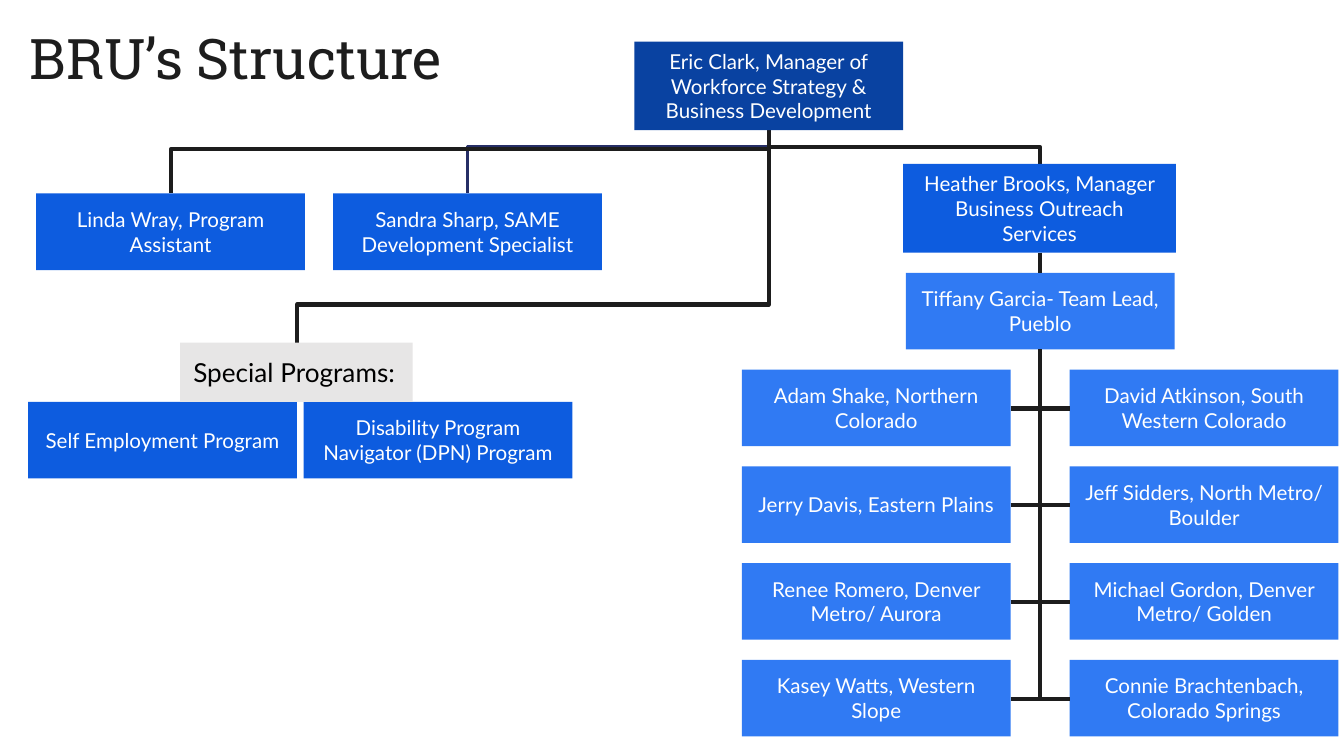
from lxml.etree import SubElement
from pptx import Presentation
from pptx.dml.color import RGBColor
from pptx.enum.shapes import MSO_CONNECTOR, MSO_SHAPE
from pptx.enum.text import MSO_ANCHOR, PP_ALIGN
from pptx.oxml.ns import qn
from pptx.util import Inches, Pt

COLORS = {
    "ink": "1D1D1D", "navy": "0942A1", "blue": "0D5CDF", "sky": "307AF3",
    "gray": "E7E6E6", "thin": "262E66", "white": "FFFFFF", "black": "000000",
}
MARGINS = ("margin_left", "margin_top", "margin_right", "margin_bottom")

prs = Presentation()
prs.slide_width, prs.slide_height = Inches(10), Inches(10 * 9 / 16)
s = prs.slides.add_slide(prs.slide_layouts[6])


def add_box(text, x, y, w=2, h=0.57, fill="blue", color="white", size=11,
            align=PP_ALIGN.CENTER, anchor=MSO_ANCHOR.MIDDLE):
    sp = s.shapes.add_shape(MSO_SHAPE.RECTANGLE, *map(Inches, (x, y, w, h)))
    sp.shadow.inherit = False
    sp.fill.solid()
    sp.fill.fore_color.rgb = RGBColor.from_string(COLORS[fill])
    sp.line.fill.background()
    tf = sp.text_frame
    tf.word_wrap, tf.vertical_anchor = True, anchor
    for name in MARGINS:
        setattr(tf, name, Inches(0.1))
    p = tf.paragraphs[0]
    p.alignment = align
    r = p.add_run()
    r.text = text
    font = {"name": "Lato", "size": Pt(size)}
    for name, value in font.items():
        setattr(r.font, name, value)
    r.font.color.rgb = RGBColor.from_string(COLORS[color])


def add_line(x1, y1, x2, y2, bend=None, color="ink", width=2.25):
    """Draw a straight line, or a down-across-down elbow bending at a share of its height."""
    kind = MSO_CONNECTOR.STRAIGHT
    if bend is not None:
        # The elbow is laid out sideways about its centre, then turned by 90 degrees.
        kind = MSO_CONNECTOR.ELBOW
        cx, cy, dx, dy = (x1 + x2) / 2, (y1 + y2) / 2, x2 - x1, y2 - y1
        x1, y1, x2, y2 = cx - dy / 2, cy + dx / 2, cx + dy / 2, cy - dx / 2
    c = s.shapes.add_connector(kind, *map(Inches, (x1, y1, x2, y2)))
    c.line.color.rgb = RGBColor.from_string(COLORS[color])
    c.line.width = Pt(width)
    spPr = c._element.spPr
    SubElement(spPr, qn("a:effectLst"))
    if bend is not None:
        spPr.find(qn("a:xfrm")).set("rot", str(90 * 60000))
        avLst = spPr.find(qn("a:prstGeom")).get_or_add_avLst()
        SubElement(avLst, qn("a:gd"), name="adj1", fmla=f"val {round(bend * 100000)}")


# Title
tf = s.shapes.add_textbox(*map(Inches, (0.15, 0.02, 10, 0.88))).text_frame
tf.word_wrap, tf.vertical_anchor = True, MSO_ANCHOR.MIDDLE
for name, margin in zip(MARGINS, (0.07, 0.04, 0.07, 0.04)):
    setattr(tf, name, Inches(margin))
p = tf.paragraphs[0]
p.line_spacing = 0.9
r = p.add_run()
r.text = "BRU’s Structure"
for name, value in {"name": "Roboto Slab", "size": Pt(30)}.items():
    setattr(r.font, name, value)
r.font.color.rgb = RGBColor.from_string(COLORS["ink"])

# Branches from the manager
top_x, top_y = 5.72, 0.97
add_line(top_x, top_y, 3.48, 1.44, bend=0.26, color="thin", width=1.5)
for x, y, bend in [(1.27, 1.44, 0.3), (2.21, 2.55, 0.82), (7.74, 1.22, 0.5)]:
    add_line(top_x, top_y, x, y, bend)

# Managers, staff and special programs
add_box("Eric Clark, Manager of Workforce Strategy & Business Development",
        4.72, 0.31, h=0.66, fill="navy")
add_box("Linda Wray, Program Assistant", 0.27, 1.44)
add_box("Sandra Sharp, SAME Development Specialist", 2.48, 1.44)
add_box("Heather Brooks, Manager Business Outreach Services", 6.72, 1.22, w=2.03, h=0.66)
add_box("Tiffany Garcia- Team Lead, Pueblo", 6.74, 2.03, fill="sky")
add_box("Self Employment Program", 0.21, 2.99)
add_box("Disability Program Navigator (DPN) Program", 2.26, 2.99)
add_box("Special Programs:", 1.34, 2.55, w=1.73, h=0.44, fill="gray", color="black",
        size=14, align=PP_ALIGN.LEFT, anchor=MSO_ANCHOR.TOP)

# Regional team: pairs of boxes on either side of a trunk
trunk_x = 7.74
add_line(trunk_x, 1.88, trunk_x, 2.03)
add_line(trunk_x, 2.6, trunk_x, 5.2)
regions = [
    ("Adam Shake, Northern Colorado", "David Atkinson, South Western Colorado"),
    ("Jerry Davis, Eastern Plains", "Jeff Sidders, North Metro/ Boulder"),
    ("Renee Romero, Denver Metro/ Aurora", "Michael Gordon, Denver Metro/ Golden"),
    ("Kasey Watts, Western Slope", "Connie Brachtenbach, Colorado Springs"),
]
for i, (left, right) in enumerate(regions):
    y = 2.75 + 0.72 * i
    add_box(left, 5.52, y, fill="sky")
    add_box(right, 7.96, y, fill="sky")
    add_line(7.52, y + 0.29, 7.96, y + 0.29)

prs.save("out.pptx")
